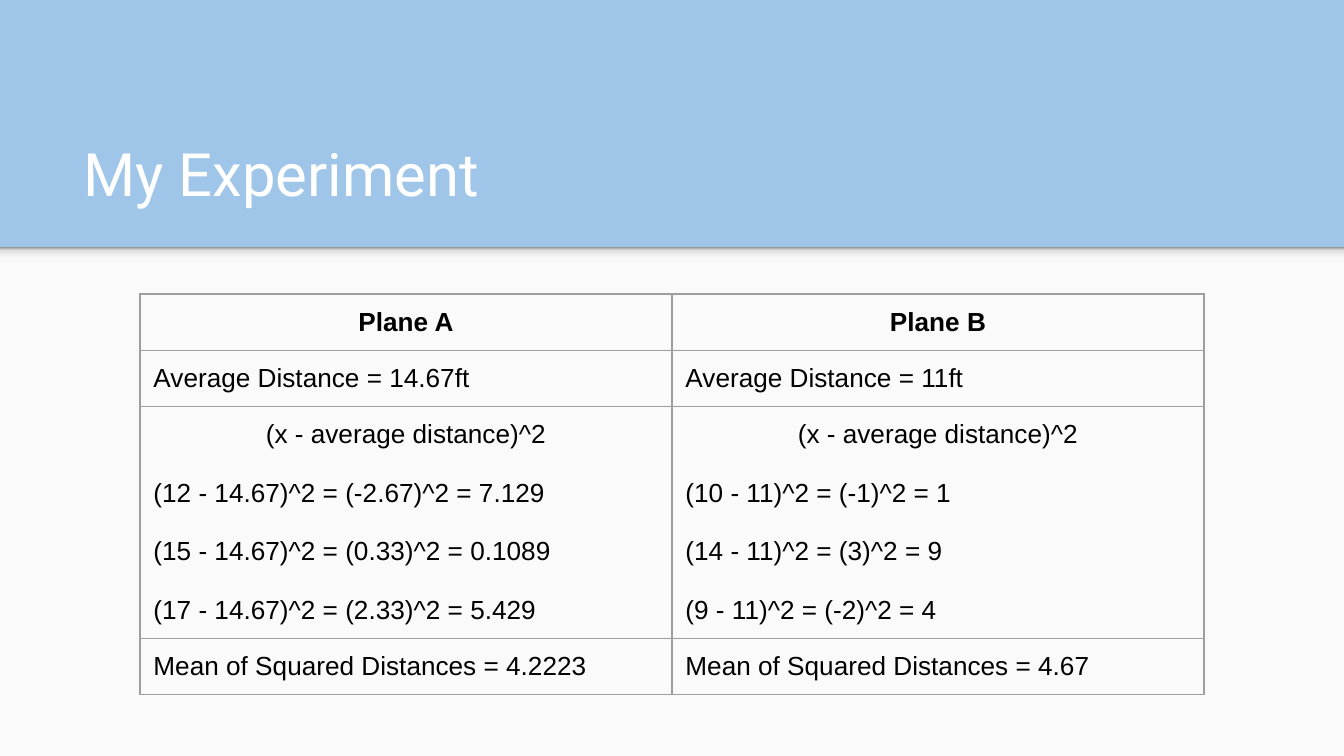
from copy import deepcopy

from lxml.etree import SubElement
from pptx import Presentation
from pptx.dml.color import RGBColor
from pptx.enum.shapes import MSO_SHAPE as Shape
from pptx.enum.text import MSO_ANCHOR as Anchor, MSO_AUTO_SIZE as AutoSize, PP_ALIGN as Align
from pptx.oxml.ns import qn
from pptx.util import Pt

WIDTH, HEIGHT = 720, 405
HEADER_BOTTOM = 132.5

PLANES = [
    ("Plane A", "14.67ft",
     ["(12 - 14.67)^2 = (-2.67)^2 = 7.129",
      "(15 - 14.67)^2 = (0.33)^2 = 0.1089",
      "(17 - 14.67)^2 = (2.33)^2 = 5.429"], "4.2223"),
    ("Plane B", "11ft",
     ["(10 - 11)^2 = (-1)^2 = 1",
      "(14 - 11)^2 = (3)^2 = 9",
      "(9 - 11)^2 = (-2)^2 = 4"], "4.67"),
]


def color(value):
    return RGBColor.from_string(value)


class SlideBuilder:
    title_font, body_font = "Roboto", "Arial"
    blue, paper, white, ink, rule = "9FC5E8", "FAFAFA", "FFFFFF", "000000", "9E9E9E"
    inset = 7.2
    line_gap = 15.6

    def __init__(self, deck):
        self.page = deck.slides.add_slide(deck.slide_layouts[5])
        background = self.page.background.fill
        background.solid()
        background.fore_color.rgb = color(self.blue)

    def panel(self, left, top, width, height):
        box = self.page.shapes.add_shape(
            Shape.RECTANGLE, Pt(left), Pt(top), Pt(width), Pt(height))
        box.shadow.inherit = False
        box.line.fill.background()
        box.fill.solid()
        box.fill.fore_color.rgb = color(self.paper)
        return box

    def gradient_panel(self, left, top, width, height, stops):
        box = self.panel(left, top, width, height)
        box.fill.gradient()
        box.fill.gradient_angle = 90
        stop_list = box._element.spPr.find(".//" + qn("a:gsLst"))
        while len(stop_list) < len(stops):
            stop_list.append(deepcopy(stop_list[0]))
        for stop, (position, value) in zip(box.fill.gradient_stops, stops):
            stop.position = position
            stop.color.rgb = color(value)

    def set_insets(self, target):
        target.margin_left = target.margin_right = Pt(self.inset)
        target.margin_top = target.margin_bottom = Pt(self.inset)

    def set_font(self, para, name, size, value, bold=False):
        font = para.font
        font.name, font.size, font.bold = name, Pt(size), bold
        font.color.rgb = color(value)

    def title(self, text, left, top, width, height):
        box = self.page.shapes.title
        box.left, box.top, box.width, box.height = map(Pt, (left, top, width, height))
        frame = box.text_frame
        frame.text = text
        frame.word_wrap = True
        frame.auto_size = AutoSize.NONE
        frame.vertical_anchor = Anchor.BOTTOM
        self.set_insets(frame)
        para = frame.paragraphs[0]
        para.alignment = Align.LEFT
        self.set_font(para, self.title_font, 32, self.white)

    def borders(self, cell):
        properties = cell._tc.get_or_add_tcPr()
        for index, side in enumerate(("lnL", "lnR", "lnT", "lnB")):
            line = SubElement(properties, qn("a:" + side), w=str(Pt(0.75)))
            fill = SubElement(line, qn("a:solidFill"))
            SubElement(fill, qn("a:srgbClr"), val=self.rule)
            properties.insert(index, line)

    def cell(self, cell, lines, centered, bold):
        cell.fill.background()
        self.set_insets(cell)
        self.borders(cell)
        cell.text = "\n".join(lines)
        for index, para in enumerate(cell.text_frame.paragraphs):
            first = index == 0
            para.alignment = Align.CENTER if first and centered else Align.LEFT
            para.space_before = Pt(0 if first else self.line_gap)
            self.set_font(para, self.body_font, 14, self.ink, bold)

    def table(self, left, top, column_width, row_heights, columns):
        frame = self.page.shapes.add_table(
            len(row_heights), len(columns), Pt(left), Pt(top),
            Pt(column_width * len(columns)), Pt(sum(row_heights)))
        table = frame.table
        table.first_row = table.horz_banding = False
        for row, height in zip(table.rows, row_heights):
            row.height = Pt(height)
        for column_index, rows in enumerate(columns):
            table.columns[column_index].width = Pt(column_width)
            for row_index, lines in enumerate(rows):
                self.cell(table.cell(row_index, column_index), lines,
                          centered=row_index in (0, 2), bold=row_index == 0)


def main():
    deck = Presentation()
    deck.slide_width, deck.slide_height = Pt(WIDTH), Pt(HEIGHT)
    builder = SlideBuilder(deck)

    # Content area with a soft shade under the header
    builder.panel(0, HEADER_BOTTOM, WIDTH, HEIGHT - HEADER_BOTTOM)
    builder.gradient_panel(
        0, HEADER_BOTTOM, WIDTH, 8.5,
        [(0, "F9F9F9"), (0.36, "F9F9F9"), (0.8, "DEDEDE"), (1, "999999")])

    # Header
    builder.title("My Experiment", 37.5, 58.3, 647, 60.5)

    # Results, one column per plane
    columns = [
        [[name],
         [f"Average Distance = {average}"],
         ["(x - average distance)^2", *squares],
         [f"Mean of Squared Distances = {mean}"]]
        for name, average, squares, mean in PLANES
    ]
    builder.table(75, 157.5, 285, [30, 30, 124.3, 30], columns)

    deck.save("out.pptx")


if __name__ == "__main__":
    main()
